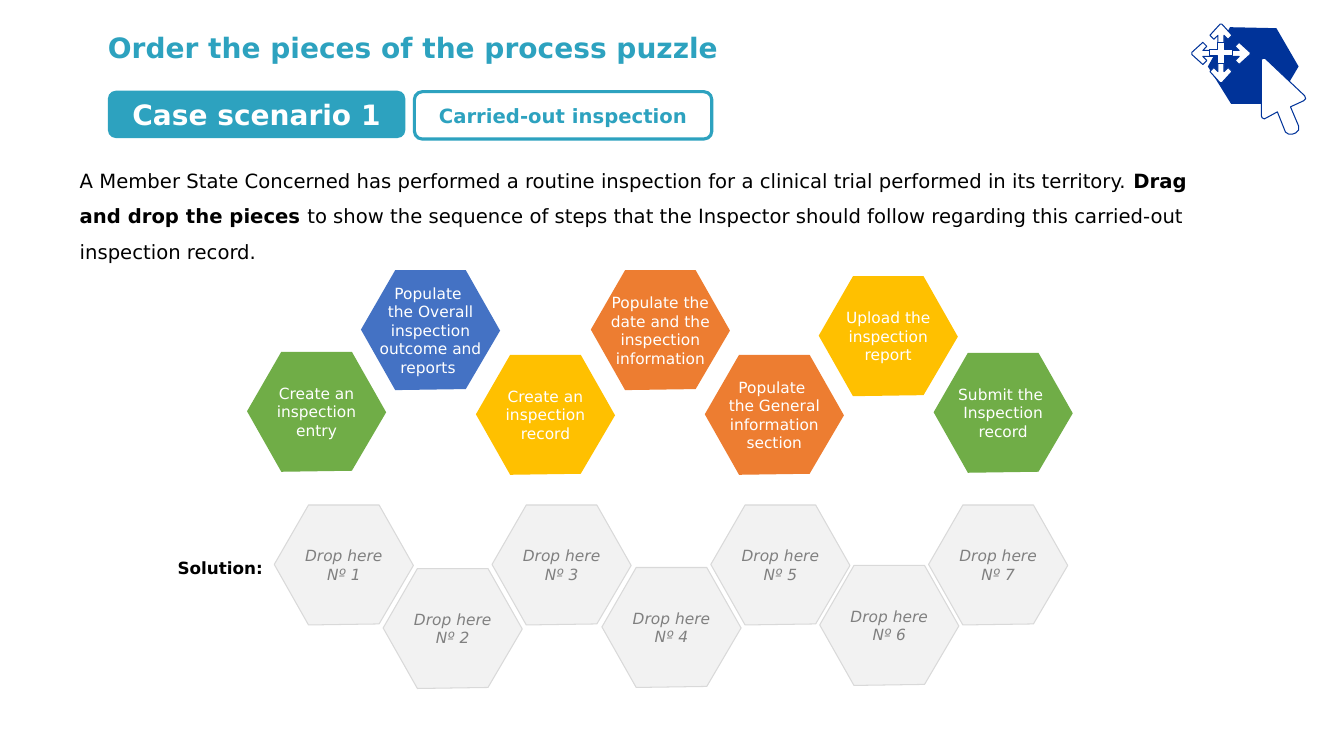
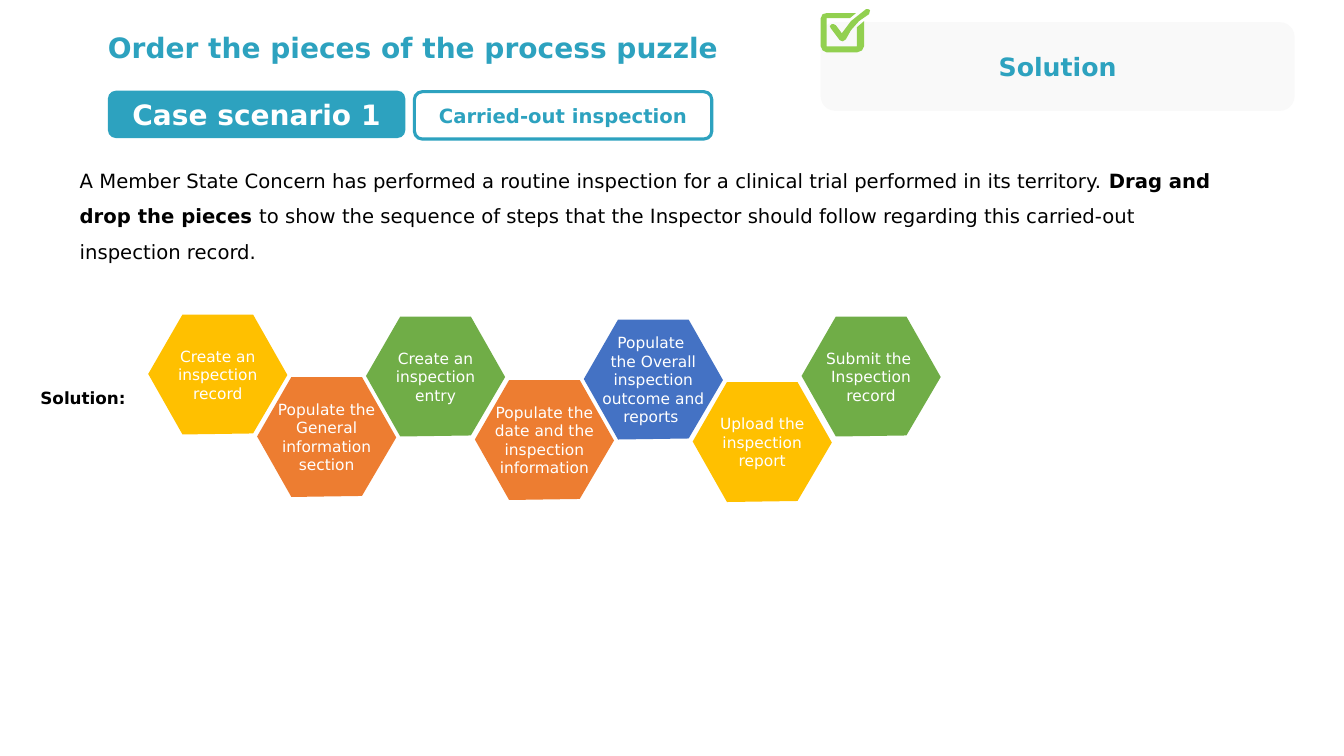
from pptx import Presentation, util as u
from pptx.dml import color
from pptx.enum import shapes, text

PX = 9144
FONT = "DejaVu Sans"
COLORS = {
    "teal": "2DA2BF", "white": "FFFFFF", "black": "000000", "navy": "003399",
    "panel": "F9F9F9", "tick": "92D050", "slot": "F2F2F2", "edge": "D9D9D9",
    "hint": "808080", "green": "70AD47", "yellow": "FFC000",
    "orange": "ED7D31", "blue": "4472C4",
}
HEXAGON = [(34, 0), (104, 0), (138, 60), (104, 118), (34, 119), (0, 59)]
ICON_HEXAGON = [(38, 2), (84, 3), (106, 41), (84, 78), (39, 78), (16, 41)]
ARROW_ARM = [(3, -3), (18, -3), (14, -7), (18, -11), (29, -1),
             (29, 1), (18, 11), (14, 7), (18, 3)]
POINTER = [(70, 33), (73, 33), (112, 70), (113, 73), (111, 75), (98, 81),
           (106, 100), (106, 104), (103, 107), (100, 108), (96, 108),
           (93, 106), (85, 86), (72, 93), (70, 92), (69, 90), (69, 35)]
TICK = [(45, 0), (30, 12), (21, 24), (15, 16), (13, 15), (11, 15), (9, 17),
        (10, 19), (19, 31), (22, 32), (25, 30), (30, 21), (38, 12),
        (48, 5), (49, 1), (47, 0)]
CHECKBOX = [(36, 18), (36, 37), (6, 37), (6, 9), (29, 9), (35, 4), (6, 4),
            (2, 5), (0, 9), (0, 37), (2, 41), (6, 43), (36, 43), (41, 41),
            (43, 37), (43, 12)]

ENTRY = ("Create an inspection entry", "green")
RECORD = ("Create an inspection record", "yellow")
OVERALL = ("Populate \nthe Overall inspection outcome and reports ", "blue")
DATE = ("Populate the date and the inspection information", "orange")
GENERAL_SPLIT = ("Populate \nthe General information section", "orange")
GENERAL = ("Populate the General information section", "orange")
REPORT = ("Upload the inspection report", "yellow")
SUBMIT = ("Submit the \nInspection record", "green")


def rgb(name):
    return color.RGBColor.from_string(COLORS[name])


def style_span(span, size, ink, bold=False, italic=False):
    font = span.font
    font.name, font.size = FONT, u.Pt(size)
    font.bold, font.italic = bold, italic
    font.color.rgb = rgb(ink)


def paint(shape, fill=None, line=None, width=0.75):
    shape.shadow.inherit = False
    if fill:
        shape.fill.solid()
        shape.fill.fore_color.rgb = rgb(fill)
    else:
        shape.fill.background()
    if line:
        shape.line.color.rgb = rgb(line)
        shape.line.width = u.Pt(width)
    else:
        shape.line.fill.background()


def write_centered(shape, words, size, ink, bold=False, italic=False):
    frame = shape.text_frame
    frame.word_wrap = True
    frame.vertical_anchor = text.MSO_ANCHOR.MIDDLE
    frame.text = words
    for para in frame.paragraphs:
        para.alignment = text.PP_ALIGN.CENTER
        for span in para.runs:
            style_span(span, size, ink, bold, italic)


def add_outline(page, left, top, points, fill, line=None, width=0.75):
    corners = [(left + x, top + y) for x, y in points]
    builder = page.shapes.build_freeform(*corners[0], scale=PX)
    builder.add_line_segments(corners[1:], close=True)
    shape = builder.convert_to_shape()
    paint(shape, fill, line, width)
    return shape


def add_label(page, box, words, size, ink, fill=None, line=None):
    shape = page.shapes.add_shape(shapes.MSO_SHAPE.ROUNDED_RECTANGLE,
                                  *(side * PX for side in box))
    paint(shape, fill, line, 2.25)
    write_centered(shape, words, size, ink, bold=True)


def place(holder, box):
    holder.left, holder.top, holder.width, holder.height = (
        side * PX for side in box)
    frame = holder.text_frame
    frame.word_wrap = True
    frame.auto_size = text.MSO_AUTO_SIZE.NONE
    frame.vertical_anchor = text.MSO_ANCHOR.TOP
    para = frame.paragraphs[0]
    para.alignment = text.PP_ALIGN.LEFT
    para.space_before = u.Pt(0)
    return para


def add_page(deck, subject):
    page = deck.slides.add_slide(deck.slide_layouts[1])
    heading = place(page.shapes.title, (97, 25, 674, 44))
    heading.text = "Order the pieces of the process puzzle"
    style_span(heading.runs[0], 20, "teal", bold=True)

    intro = place(page.placeholders[1], (69, 151, 1161, 111))
    intro.line_spacing = 1.5
    properties = intro._p.get_or_add_pPr()
    properties.set("marL", "0")
    properties.set("indent", "0")
    properties.append(properties.makeelement(
        "{http://schemas.openxmlformats.org/drawingml/2006/main}buNone", {}))
    sentences = [
        (f"A Member State {subject} has performed a routine inspection for a "
         "clinical trial performed in its territory. ", False),
        ("Drag and drop the pieces ", True),
        ("to show the sequence of steps that the Inspector should follow "
         "regarding this carried-out inspection record.", False),
    ]
    for words, bold in sentences:
        span = intro.add_run()
        span.text = words
        style_span(span, 14, "black", bold)

    add_label(page, (107, 90, 295, 47), "Case scenario 1", 20, "white", fill="teal")
    add_label(page, (411, 91, 295, 47), "Carried-out inspection", 14, "teal", line="teal")
    return page


def add_hexagons(page, left, step, tops, pieces, ink="white", line=None, italic=False):
    for index, (top, (words, fill)) in enumerate(zip(tops, pieces)):
        shape = add_outline(page, round(left + index * step), top, HEXAGON, fill, line)
        frame = shape.text_frame
        frame.margin_left = frame.margin_right = 8 * PX
        frame.margin_top = frame.margin_bottom = 5 * PX
        write_centered(shape, words, 11, ink, italic=italic)


def add_solution_label(page, left, top):
    add_label(page, (left, top, 133, 70), "Solution:", 12, "black")


def add_drag_icon(page, left, top):
    add_outline(page, left, top, ICON_HEXAGON, "navy")
    arrows, arm = [], ARROW_ARM
    for _ in range(4):
        arrows += [(29 + x, 28 + y) for x, y in arm]
        arm = [(-y, x) for x, y in arm]
    add_outline(page, left, top, arrows, "white", "navy", 0)
    cross = page.shapes.add_shape(
        shapes.MSO_SHAPE.CROSS, (left + 18) * PX, (top + 17) * PX, 22 * PX, 21 * PX)
    cross.adjustments[0] = 0.36
    paint(cross, "white", "navy", 0)
    add_outline(page, left, top, POINTER, "white", "navy")


def add_solution_panel(page, left, top):
    add_label(page, (left, top, 470, 88), "Solution", 18, "teal", fill="panel")
    for points in (TICK, CHECKBOX):
        add_outline(page, left, top - 13, points, "tick")


def build_puzzle(deck):
    page = add_page(deck, "Concerned")
    slots = [(f"Drop here\nNº {number}", "slot") for number in range(1, 8)]
    add_hexagons(page, 272, 108.2, [501, 564, 501, 563, 501, 561, 501], slots,
                 ink="hint", line="edge", italic=True)
    add_hexagons(page, 245, 113.5, [349, 268, 352, 268, 352, 274, 350],
                 [ENTRY, OVERALL, RECORD, DATE, GENERAL_SPLIT, REPORT, SUBMIT])
    add_solution_label(page, 152, 528)
    add_drag_icon(page, 1182, 25)


def build_solution(deck):
    page = add_page(deck, "Concern")
    add_hexagons(page, 147, 108, [312, 374, 314, 377, 317, 379, 314],
                 [RECORD, GENERAL, ENTRY, DATE, OVERALL, REPORT, SUBMIT])
    add_solution_label(page, 16, 360)
    add_solution_panel(page, 814, 22)


def main():
    deck = Presentation()
    deck.slide_width, deck.slide_height = 1333 * PX, 750 * PX
    build_puzzle(deck)
    build_solution(deck)
    deck.save("out.pptx")


if __name__ == "__main__":
    main()
